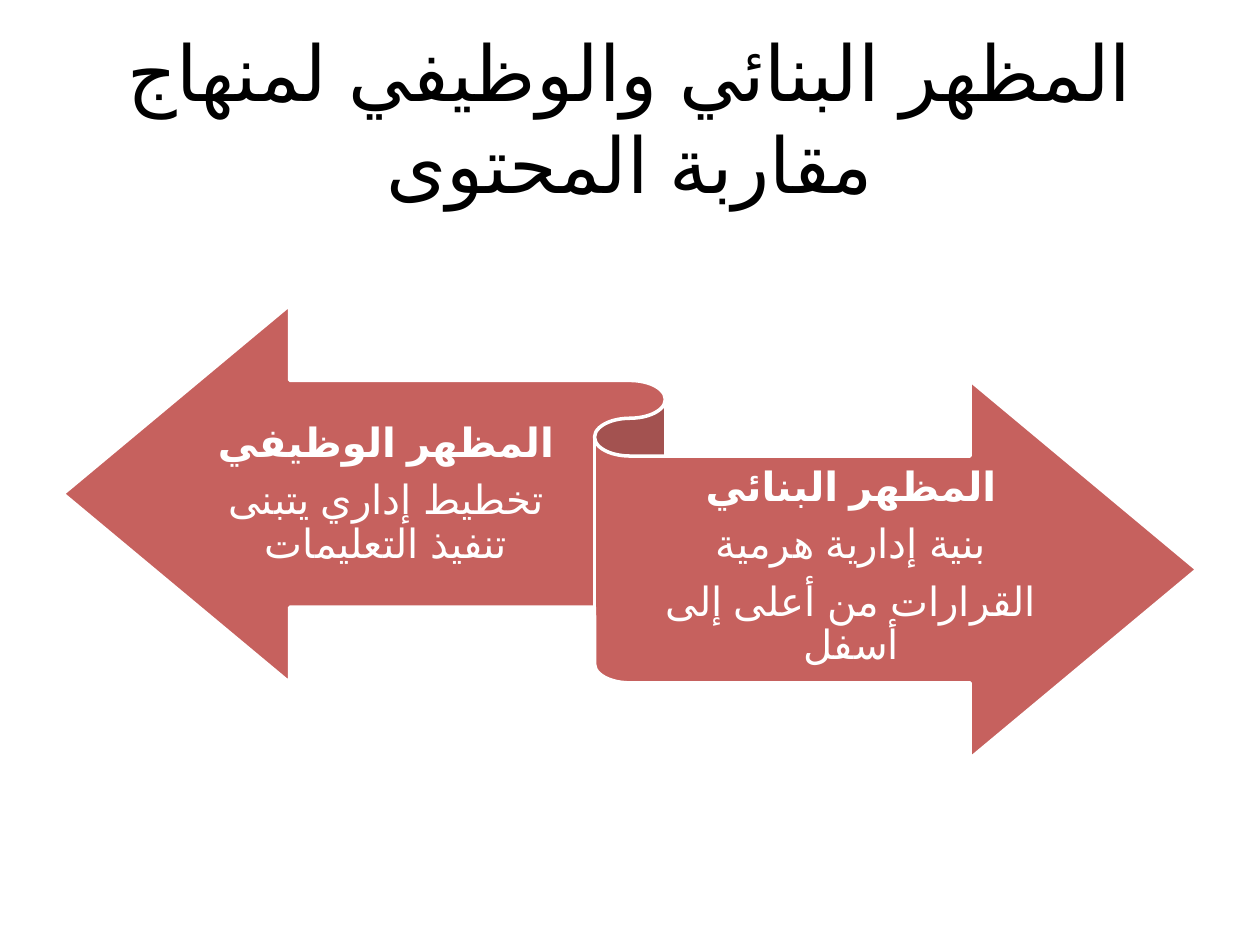
from lxml.etree import SubElement
from pptx import Presentation
from pptx.dml.color import RGBColor
from pptx.enum.lang import MSO_LANGUAGE_ID
from pptx.enum.shapes import MSO_SHAPE
from pptx.enum.text import MSO_ANCHOR, MSO_AUTO_SIZE, PP_ALIGN
from pptx.oxml.ns import qn
from pptx.util import Inches, Pt

BLACK = RGBColor(0x00, 0x00, 0x00)
WHITE = RGBColor(0xFF, 0xFF, 0xFF)
RED = RGBColor(0xC0, 0x50, 0x4D)
FONT = "Arial"


def place(shape, left, top, width, height):
    shape.left, shape.top = Inches(left), Inches(top)
    shape.width, shape.height = Inches(width), Inches(height)


def add_span(para, text, size, color, bold=False):
    para.alignment = PP_ALIGN.CENTER
    span = para.add_run()
    span.text = text
    span.font.name = FONT
    span.font.size = Pt(size)
    span.font.bold = bold
    span.font.color.rgb = color
    span.font.language_id = MSO_LANGUAGE_ID.ARABIC
    SubElement(span._r.get_or_add_rPr(), qn("a:cs"), typeface=FONT)


def set_title(page, text):
    title = page.shapes.title
    place(title, 0.5, 0.3, 9, 1.25)
    frame = title.text_frame
    frame.auto_size = MSO_AUTO_SIZE.NONE
    frame.vertical_anchor = MSO_ANCHOR.MIDDLE
    add_span(frame.paragraphs[0], text, 44, BLACK)


def add_ribbon(page):
    ribbon = page.shapes.add_shape(
        MSO_SHAPE.LEFT_RIGHT_RIBBON, Inches(0.5), Inches(2.42), Inches(9), Inches(3.6)
    )
    ribbon.shadow.inherit = False
    ribbon.fill.solid()
    ribbon.fill.fore_color.rgb = RED
    color = ribbon.fill._xPr.find(qn("a:solidFill")).find(qn("a:srgbClr"))
    SubElement(color, qn("a:alpha"), val="90000")
    ribbon.line.color.rgb = WHITE
    ribbon.line.width = Pt(2)


def add_arrow_text(page, left, top, width, heading, details):
    box = page.shapes.add_textbox(Inches(left), Inches(top), Inches(width), Inches(1.76))
    frame = box.text_frame
    frame.word_wrap = True
    frame.vertical_anchor = MSO_ANCHOR.MIDDLE
    frame.margin_left = frame.margin_right = 0
    frame.margin_top, frame.margin_bottom = Inches(0.09), Inches(0.1)
    for index, text in enumerate([heading, *details]):
        para = frame.add_paragraph() if index else frame.paragraphs[0]
        para.line_spacing = 0.9
        para.space_after = Pt(8)
        para._p.get_or_add_pPr().set("rtl", "1")
        add_span(para, text, 23, WHITE, bold=index == 0)


def main():
    deck = Presentation()
    deck.slide_width, deck.slide_height = Inches(10), Inches(7.5)
    page = deck.slides.add_slide(deck.slide_layouts[5])
    set_title(page, "المظهر البنائي والوظيفي لمنهاج مقاربة المحتوى")
    add_ribbon(page)
    add_arrow_text(
        page, 1.58, 3.05, 2.97, "المظهر الوظيفي", ["تخطيط إداري يتبنى تنفيذ التعليمات"]
    )
    add_arrow_text(
        page, 5, 3.63, 3.51, "المظهر البنائي",
        ["بنية إدارية هرمية", "القرارات من أعلى إلى أسفل"],
    )
    deck.save("out.pptx")


if __name__ == "__main__":
    main()
